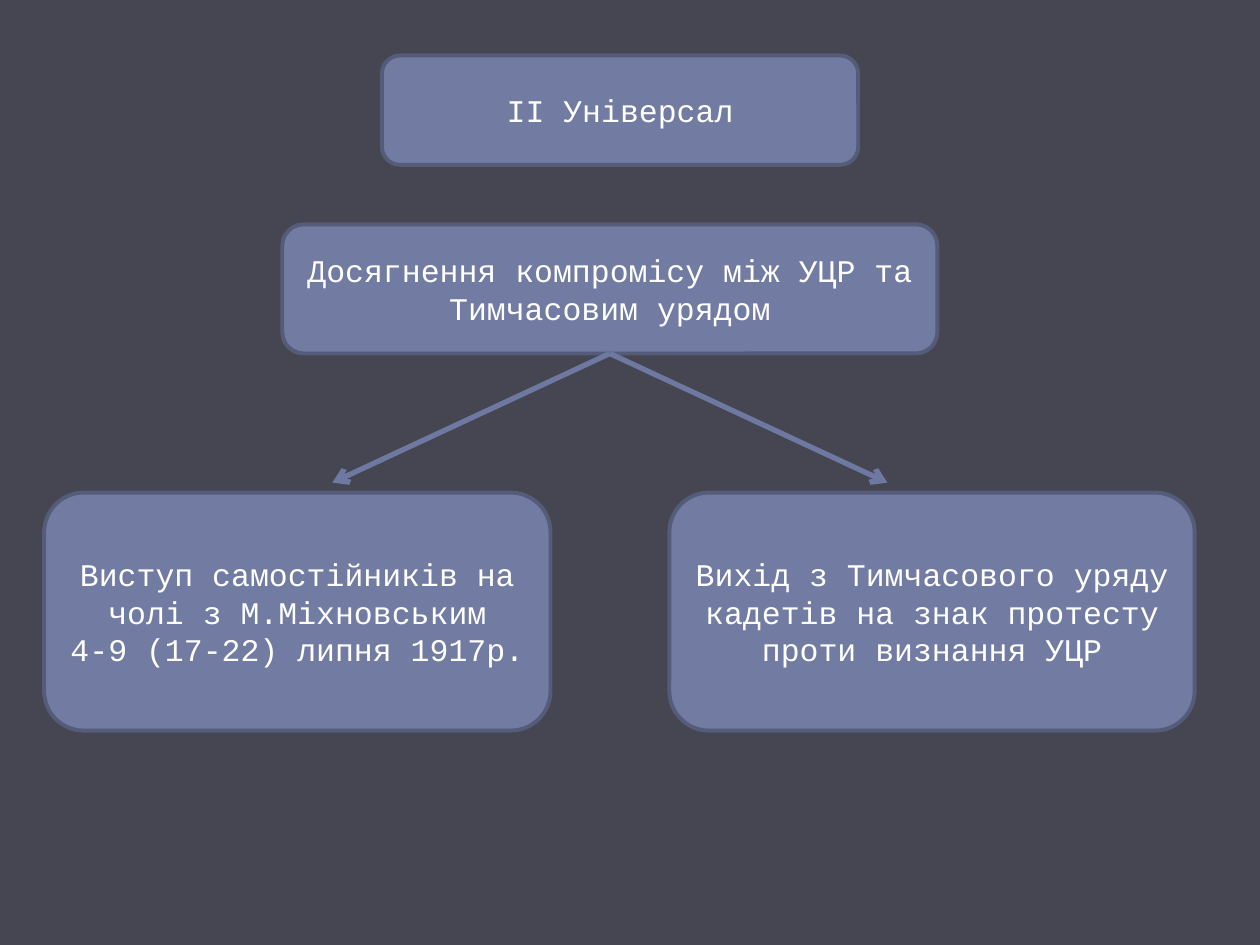
from dataclasses import dataclass

import lxml.etree
import pptx
import pptx.dml.color
import pptx.enum.shapes
import pptx.enum.text
import pptx.oxml
import pptx.oxml.ns
import pptx.shapes.autoshape
import pptx.slide
import pptx.text.text
import pptx.util

Pt = pptx.util.Pt


@dataclass(frozen=True)
class Theme:
    background: str = "464653"
    fill: str = "727CA3"
    outline: str = "545C79"
    arrow: str = "6E79A1"
    text: str = "FFFFFF"
    font: str = "Courier New"
    size: float = 18
    outline_width: float = 2.25
    arrow_width: float = 3


@dataclass(frozen=True)
class Box:
    left: float
    top: float
    width: float
    height: float
    paragraphs: tuple[str, ...]


THEME = Theme()
OUTCOME_TOP, OUTCOME_HEIGHT = 281.5, 136
ARROW_END_Y, ARROW_SPREAD = 275.8, 158.6

TITLE = Box(218.2, 31.7, 272.2, 62.6, ("ІІ Універсал",))
COMPROMISE = Box(161.3, 128.2, 374.4, 73.8,
                 ("Досягнення компромісу між УЦР та Тимчасовим урядом",))
OUTCOMES = (
    Box(25.2, OUTCOME_TOP, 289.4, OUTCOME_HEIGHT,
        ("Виступ самостійників на чолі з М.Міхновським", "4-9 (17-22) липня 1917р.")),
    Box(382.5, OUTCOME_TOP, 300.2, OUTCOME_HEIGHT,
        ("Вихід з Тимчасового уряду кадетів на знак протесту проти визнання УЦР",)),
)


def rgb(value: str) -> pptx.dml.color.RGBColor:
    """Turn a hex string into a colour."""
    return pptx.dml.color.RGBColor.from_string(value)


def write(tf: pptx.text.text.TextFrame, paragraphs: tuple[str, ...]) -> None:
    """Fill a text frame with centred paragraphs."""
    tf.word_wrap = True
    tf.auto_size = pptx.enum.text.MSO_AUTO_SIZE.NONE
    tf.vertical_anchor = pptx.enum.text.MSO_ANCHOR.MIDDLE
    tf.text = "\n".join(paragraphs)
    for p in tf.paragraphs:
        p.alignment = pptx.enum.text.PP_ALIGN.CENTER
        p.font.name = THEME.font
        p.font.size = Pt(THEME.size)
        p.font.color.rgb = rgb(THEME.text)


def add_panel(s: pptx.slide.Slide, box: Box) -> pptx.shapes.autoshape.Shape:
    """Draw the rounded panel of a box."""
    sp = s.shapes.add_shape(
        pptx.enum.shapes.MSO_SHAPE.ROUNDED_RECTANGLE,
        Pt(box.left), Pt(box.top), Pt(box.width), Pt(box.height))
    sp.shadow.inherit = False
    sp.fill.solid()
    sp.fill.fore_color.rgb = rgb(THEME.fill)
    sp.line.color.rgb = rgb(THEME.outline)
    sp.line.width = Pt(THEME.outline_width)
    return sp


def add_box(s: pptx.slide.Slide, box: Box) -> pptx.shapes.autoshape.Shape:
    """Draw a panel with its text."""
    sp = add_panel(s, box)
    write(sp.text_frame, box.paragraphs)
    return sp


def place_title(s: pptx.slide.Slide, box: Box) -> None:
    """Set the title placeholder in front of its panel."""
    add_panel(s, box)
    sp = s.shapes.title
    sp.left, sp.top = Pt(box.left), Pt(box.top)
    sp.width, sp.height = Pt(box.width), Pt(box.height)
    write(sp.text_frame, box.paragraphs)
    sp.element.getparent().append(sp.element)


def add_arrow(s: pptx.slide.Slide, source: pptx.shapes.autoshape.Shape,
              x: float, y: float) -> None:
    """Draw an arrow from the bottom of a shape to a point."""
    connector = s.shapes.add_connector(
        pptx.enum.shapes.MSO_CONNECTOR.STRAIGHT,
        source.left + source.width // 2, source.top + source.height, Pt(x), Pt(y))
    connector.begin_connect(source, 2)
    connector.line.color.rgb = rgb(THEME.arrow)
    connector.line.width = Pt(THEME.arrow_width)
    qn = pptx.oxml.ns.qn
    lxml.etree.SubElement(connector.line._get_or_add_ln(), qn("a:tailEnd"), type="arrow")
    lxml.etree.SubElement(connector.element.spPr, qn("a:effectLst"))


def main() -> None:
    """Build the slide and save it."""
    prs = pptx.Presentation()
    prs.slide_width, prs.slide_height = Pt(720), Pt(540)
    s = prs.slides.add_slide(prs.slide_layouts.get_by_name("Title Only"))
    s.background.fill.solid()
    s.background.fill.fore_color.rgb = rgb(THEME.background)

    place_title(s, TITLE)
    compromise = add_box(s, COMPROMISE)
    for box in OUTCOMES:
        add_box(s, box)
    center = COMPROMISE.left + COMPROMISE.width / 2
    for side in (-1, 1):
        add_arrow(s, compromise, center + side * ARROW_SPREAD, ARROW_END_Y)
    prs.save("out.pptx")


if __name__ == "__main__":
    main()
